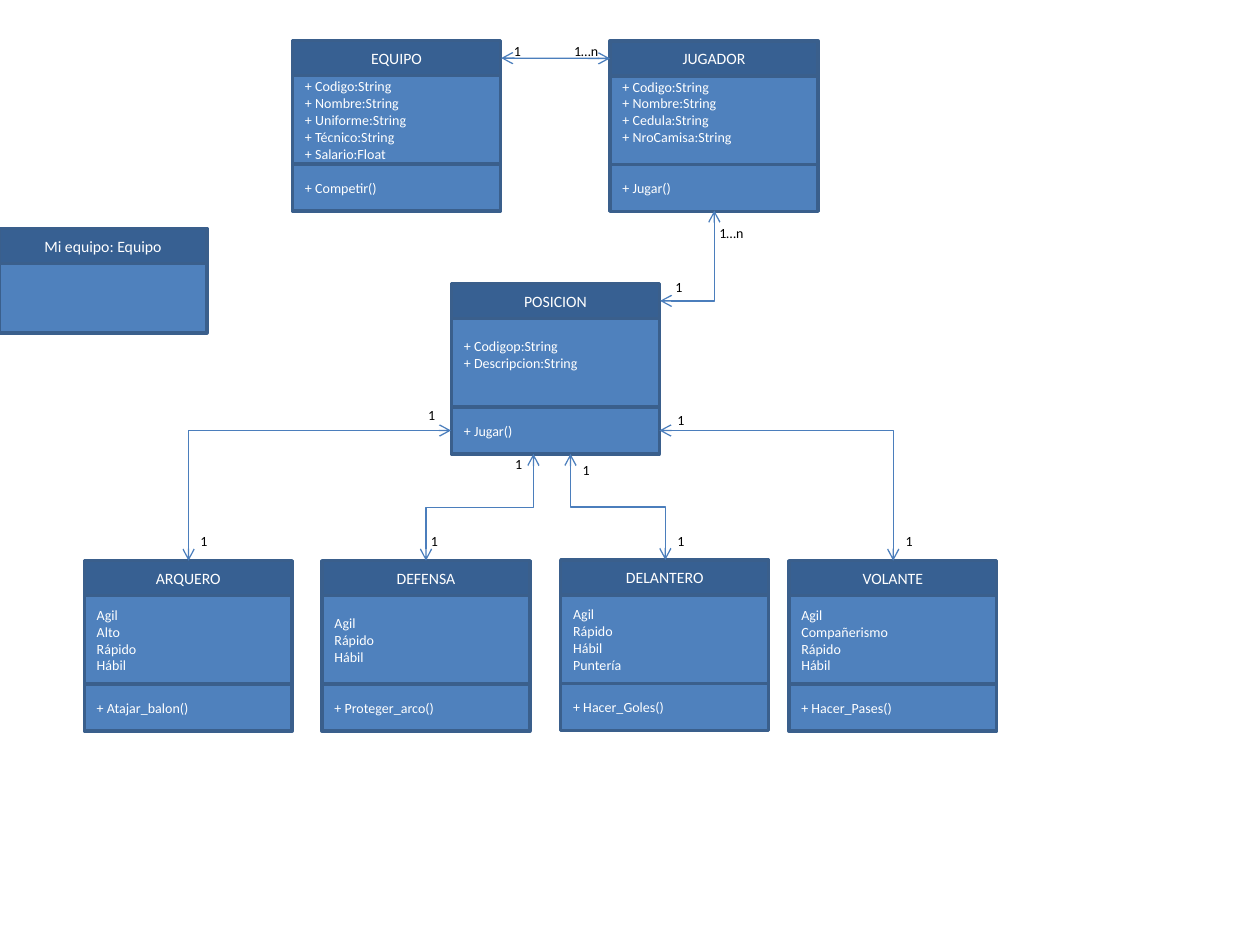
from lxml.etree import SubElement
from pptx import Presentation
from pptx.dml.color import RGBColor
from pptx.enum.shapes import MSO_CONNECTOR, MSO_SHAPE
from pptx.enum.text import MSO_ANCHOR, MSO_AUTO_SIZE, PP_ALIGN
from pptx.oxml.ns import qn
from pptx.util import Pt

CARD_WIDTH = 118.8
NAME_HEIGHT, FIELDS_HEIGHT, METHODS_HEIGHT = 20, 50.6, 26.8
OBJECT_HEIGHT = 39.6
TEXT_LINE = 9.8
ROW_TOP = 320.4

CLASSES = [
    ("EQUIPO", 167.2, 23.2,
     ["+ Codigo:String", "+ Nombre:String", "+ Uniforme:String",
      "+ Técnico:String", "+ Salario:Float"], "+ Competir()", 0),
    ("JUGADOR", 348.6, 23.4,
     ["+ Codigo:String", "+ Nombre:String", "+ Cedula:String",
      "+ NroCamisa:String"], "+ Jugar()", TEXT_LINE),
    ("POSICION", 258, 162,
     ["+ Codigop:String", "+ Descripcion:String"], "+ Jugar()", TEXT_LINE),
    ("ARQUERO", 48.2, ROW_TOP,
     ["Agil", "Alto", "Rápido", "Hábil"], "+ Atajar_balon()", 0),
    ("DEFENSA", 184, ROW_TOP,
     ["Agil", "Rápido", "Hábil"], "+ Proteger_arco()", 0),
    ("DELANTERO", 320.4, ROW_TOP - 0.4,
     ["Agil", "Rápido", "Hábil", "Puntería"], "+ Hacer_Goles()", 0),
    ("VOLANTE", 450.8, ROW_TOP,
     ["Agil", "Compañerismo", "Rápido", "Hábil"], "+ Hacer_Pases()", 0),
]

CORNERS = [
    (377.2, 172, 408.2, 120.4),
    (257.8, 246, 107.8, ROW_TOP),
    (376.8, 246, 510.4, ROW_TOP),
]

STEPS = [
    (304.8, 259.4, 243.4, ROW_TOP),
    (326, 259.4, 380.2, ROW_TOP - 0.4),
]

MULTIPLICITIES = [
    ("1", 286.6, 20.8), ("1…n", 321, 20.8),
    ("1", 378.8, 155.4), ("1…n", 404, 124.6),
    ("1", 237.6, 229), ("1", 107.4, 301),
    ("1", 287.2, 256.6), ("1", 239.2, 301),
    ("1", 325.8, 260.4), ("1", 380, 301),
    ("1", 510.4, 301), ("1", 380, 231.8),
]


def color(value):
    return RGBColor.from_string(value)


def write(frame, lines, size, ink, align):
    frame.text = "\n".join(lines)
    for para in frame.paragraphs:
        para.alignment = align
        for span in para.runs:
            span.font.name = "Calibri"
            span.font.size = Pt(size)
            span.font.color.rgb = color(ink)


def add_band(page, left, top, height, fill, lines=(), size=8,
             align=PP_ALIGN.LEFT):
    band = page.shapes.add_shape(MSO_SHAPE.RECTANGLE, Pt(left), Pt(top),
                                 Pt(CARD_WIDTH), Pt(height))
    band.shadow.inherit = False
    band.fill.solid()
    band.fill.fore_color.rgb = color(fill)
    band.line.color.rgb = color("3A5F8C")
    band.line.width = Pt(2)
    band.text_frame.word_wrap = True
    band.text_frame.vertical_anchor = MSO_ANCHOR.MIDDLE
    if lines:
        write(band.text_frame, lines, size, "FFFFFF", align)
    return band


def add_name(page, left, top, name):
    add_band(page, left, top, NAME_HEIGHT, "376092", [name], 9,
             PP_ALIGN.CENTER)


def add_object_card(page, left, top, name):
    add_name(page, left, top, name)
    add_band(page, left, top + NAME_HEIGHT, OBJECT_HEIGHT, "4F81BD")


def add_class_card(page, name, left, top, fields, method, lift):
    add_name(page, left, top, name)
    fields_top = top + NAME_HEIGHT
    band = add_band(page, left, fields_top, FIELDS_HEIGHT, "4F81BD", fields)
    band.text_frame.margin_top = 0
    band.text_frame.margin_bottom = Pt(lift)
    add_band(page, left, fields_top + FIELDS_HEIGHT, METHODS_HEIGHT,
             "4F81BD", [method])


def add_link(page, kind, start_x, start_y, end_x, end_y):
    link = page.shapes.add_connector(kind, Pt(start_x), Pt(start_y),
                                     Pt(end_x), Pt(end_y))
    link.line.color.rgb = color("4B7EBC")
    link.line.width = Pt(0.75)
    properties = link._element.spPr
    outline = properties.find(qn("a:ln"))
    for end in ("a:headEnd", "a:tailEnd"):
        SubElement(outline, qn(end), type="arrow")
    SubElement(properties, qn("a:effectLst"))
    return properties


def add_corner(page, start_x, start_y, end_x, end_y):
    properties = add_link(page, MSO_CONNECTOR.ELBOW,
                          start_x, start_y, end_x, end_y)
    properties.find(qn("a:prstGeom")).set("prst", "bentConnector2")


def add_step(page, start_x, start_y, end_x, end_y):
    center_x, center_y = (start_x + end_x) / 2, (start_y + end_y) / 2
    half_width, half_height = (end_x - start_x) / 2, (end_y - start_y) / 2
    properties = add_link(page, MSO_CONNECTOR.ELBOW,
                          center_x - half_height, center_y + half_width,
                          center_x + half_height, center_y - half_width)
    properties.find(qn("a:xfrm")).set("rot", "5400000")


def add_multiplicity(page, text, left, top):
    width = 18.8 if text == "1" else 28
    box = page.shapes.add_textbox(Pt(left), Pt(top), Pt(width), Pt(17))
    box.text_frame.word_wrap = False
    box.text_frame.auto_size = MSO_AUTO_SIZE.SHAPE_TO_FIT_TEXT
    write(box.text_frame, [text], 8, "000000", PP_ALIGN.LEFT)


def main():
    deck = Presentation()
    deck.slide_width, deck.slide_height = Pt(720), Pt(540)
    page = deck.slides.add_slide(deck.slide_layouts[6])
    add_object_card(page, -0.6, 130.6, "Mi equipo: Equipo")
    for card in CLASSES:
        add_class_card(page, *card)
    add_link(page, MSO_CONNECTOR.STRAIGHT, 286.4, 33.2, 348.6, 33.4)
    for corner in CORNERS:
        add_corner(page, *corner)
    for step in STEPS:
        add_step(page, *step)
    for multiplicity in MULTIPLICITIES:
        add_multiplicity(page, *multiplicity)
    deck.save("out.pptx")


if __name__ == "__main__":
    main()
